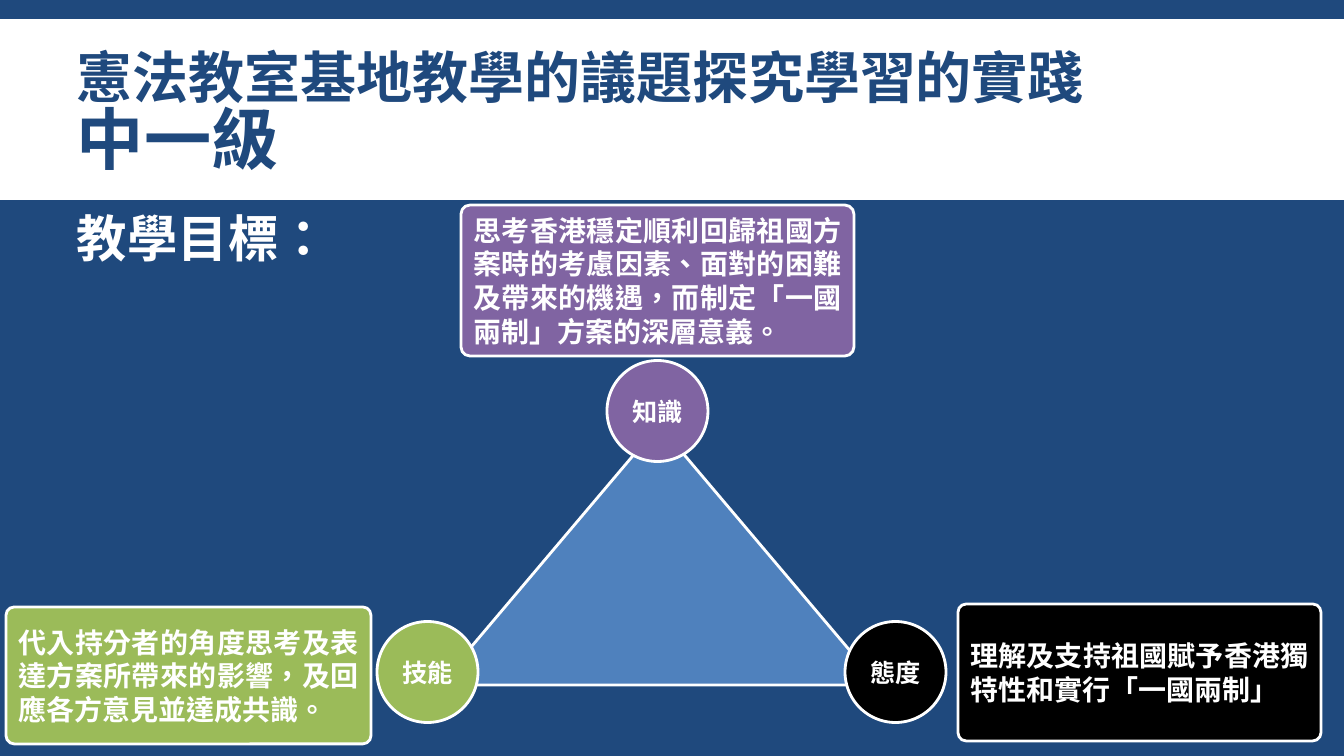
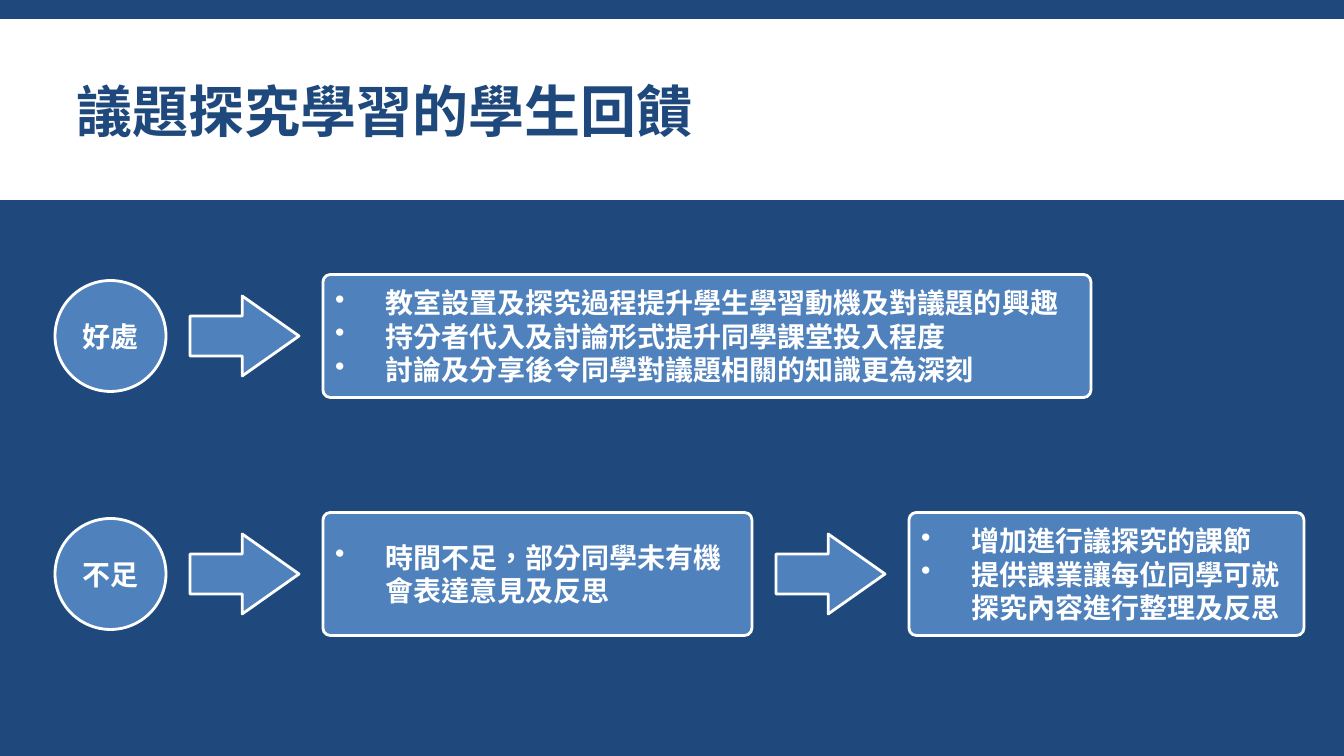
from lxml import etree
from pptx import Presentation
from pptx.dml.color import RGBColor
from pptx.enum.lang import MSO_LANGUAGE_ID
from pptx.enum.shapes import MSO_SHAPE
from pptx.enum.text import MSO_ANCHOR, PP_ALIGN
from pptx.oxml.ns import qn
from pptx.util import Pt

RECT = MSO_SHAPE.RECTANGLE
ROUND = MSO_SHAPE.ROUNDED_RECTANGLE
OVAL = MSO_SHAPE.OVAL
PEAK = MSO_SHAPE.ISOSCELES_TRIANGLE
ARROW = MSO_SHAPE.RIGHT_ARROW
LEFT, CENTER, JUSTIFY = PP_ALIGN.LEFT, PP_ALIGN.CENTER, PP_ALIGN.JUSTIFY
TOP, MIDDLE = MSO_ANCHOR.TOP, MSO_ANCHOR.MIDDLE
CHINESE = MSO_LANGUAGE_ID.TRADITIONAL_CHINESE

NAVY = RGBColor(0x1F, 0x49, 0x7D)
WHITE = RGBColor(0xFF, 0xFF, 0xFF)
BLUE = RGBColor(0x4F, 0x81, 0xBD)
PURPLE = RGBColor(0x80, 0x64, 0xA2)
GREEN = RGBColor(0x9B, 0xBB, 0x59)
BLACK = RGBColor(0x00, 0x00, 0x00)

FONT = "Cabin"
WIDTH, HEIGHT = 1344, 756
GAP = 24
INDENT = 50


def px(count):
    return round(count * 914400 / 100.8)


class Deck:
    def __init__(self):
        self.prs = Presentation()
        self.prs.slide_width = px(WIDTH)
        self.prs.slide_height = px(HEIGHT)
        self.slide = None

    def page(self, *lines):
        """Start a slide; each title line is a (text, size) pair."""
        self.slide = self.prs.slides.add_slide(self.prs.slide_layouts[6])
        fill = self.slide.background.fill
        fill.solid()
        fill.fore_color.rgb = NAVY
        self.shape(RECT, 0, 19, WIDTH, 181, WHITE).line.fill.background()
        frame = self.text(67, 32, 1186, 167, MIDDLE)
        para = frame.paragraphs[0]
        self.style(para, lines[0][1], LEFT, NAVY)
        para.line_spacing = 0.85
        for num, (text, size) in enumerate(lines):
            if num:
                para.add_line_break()
            run = para.add_run()
            run.text = text
            if size != lines[0][1]:
                run.font.size = Pt(size)

    def style(self, para, size, align, color=WHITE):
        para.alignment = align
        font = para.font
        font.name, font.size, font.bold = FONT, Pt(size), True
        font.color.rgb = color
        font.language_id = CHINESE

    def text(self, x, y, w, h, anchor):
        box = self.slide.shapes.add_textbox(px(x), px(y), px(w), px(h))
        frame = box.text_frame
        frame.word_wrap = True
        frame.vertical_anchor = anchor
        return frame

    def heading(self, text, x, y, w, h):
        para = self.text(x, y, w, h, TOP).paragraphs[0]
        para.text = text
        para.line_spacing = 0.9
        self.style(para, 36, JUSTIFY)

    def shape(self, kind, x, y, w, h, color):
        item = self.slide.shapes.add_shape(kind, px(x), px(y), px(w), px(h))
        item.shadow.inherit = False
        item.fill.solid()
        item.fill.fore_color.rgb = color
        item.line.color.rgb = WHITE
        item.line.width = Pt(2)
        return item

    def circle(self, text, x, mid, side, color, size):
        item = self.shape(OVAL, x, mid - side / 2, side, side, color)
        frame = item.text_frame
        frame.margin_left = frame.margin_right = 0
        frame.vertical_anchor = MIDDLE
        frame.text = text
        self.style(frame.paragraphs[0], size, CENTER)

    def arrow(self, x, mid):
        """Draw an arrow and return its right edge."""
        wide, tall = 109, 80
        item = self.shape(ARROW, x, mid - tall / 2, wide, tall, BLUE)
        item.adjustments[1] = 0.71
        return x + wide

    def panel(self, lines, x, y, w, h, color, align=JUSTIFY, bullet=False):
        item = self.shape(ROUND, x, y, w, h, color)
        item.adjustments[0] = 0.06
        frame = item.text_frame
        frame.word_wrap = True
        frame.vertical_anchor = MIDDLE
        frame.text = "\n".join(lines)
        for para in frame.paragraphs:
            self.style(para, 20, align)
            if bullet:
                self.bullet(para)

    def bullet(self, para):
        props = para._p.get_or_add_pPr()
        props.set("marL", str(px(INDENT)))
        props.set("indent", str(-px(INDENT)))
        mark = etree.Element(qn("a:buChar"), char="•")
        props.find(qn("a:defRPr")).addprevious(mark)

    def row(self, label, mid, *steps):
        """Chain a circle to bulleted panels, each a (width, lines) pair."""
        side, tall = 111, 123
        x = 55
        self.circle(label, x, mid, side, BLUE, 20)
        x += side
        for wide, lines in steps:
            x = self.arrow(x + GAP, mid) + GAP
            self.panel(lines, x, mid - tall / 2, wide, tall, BLUE, LEFT, True)
            x += wide


def goals(deck):
    deck.page(("憲法教室基地教學的議題探究學習的實踐", 40), ("中一級", 48))
    deck.heading("教學目標：", 67, 209, 380, 70)
    deck.shape(PEAK, 439, 425, 440, 260, BLUE)
    for label, x, mid, color, text, box in (
        ("知識", 607, 411, PURPLE,
         "思考香港穩定順利回歸祖國方案時的考慮因素、面對的困難及帶來的機遇，而制定「一國兩制」方案的深層意義。",
         (461, 205, 393, 151)),
        ("技能", 377, 672, GREEN,
         "代入持分者的角度思考及表達方案所帶來的影響，及回應各方意見並達成共識。",
         (6, 607, 365, 137)),
        ("態度", 845, 672, BLACK,
         "理解及支持祖國賦予香港獨特性和實行「一國兩制」",
         (958, 604, 363, 137)),
    ):
        deck.circle(label, x, mid, 101, color, 18)
        deck.panel([text], *box, color)


def feedback(deck):
    deck.page(("議題探究學習的學生回饋", 40))
    deck.row("好處", 336, (768, [
        "教室設置及探究過程提升學生學習動機及對議題的興趣",
        "持分者代入及討論形式提升同學課堂投入程度",
        "討論及分享後令同學對議題相關的知識更為深刻",
    ]))
    deck.row("不足", 574, (429, [
        "時間不足，部分同學未有機會表達意見及反思",
    ]), (395, [
        "增加進行議探究的課節",
        "提供課業讓每位同學可就探究內容進行整理及反思",
    ]))


def main():
    deck = Deck()
    goals(deck)
    feedback(deck)
    deck.prs.save("out.pptx")


if __name__ == "__main__":
    main()
